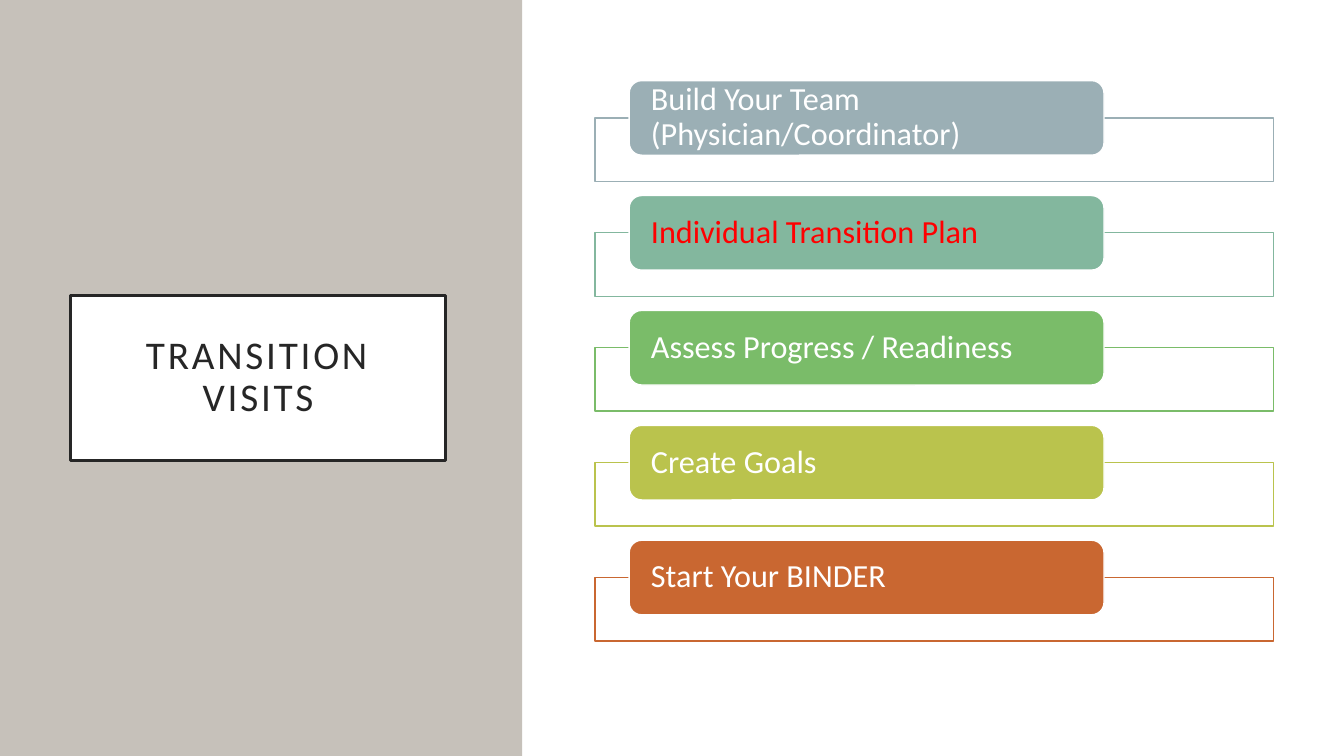
from dataclasses import dataclass

import pptx
import pptx.dml.color
import pptx.enum.shapes
import pptx.enum.text
import pptx.shapes.autoshape
import pptx.slide
import pptx.util

Inches = pptx.util.Inches
RGBColor = pptx.dml.color.RGBColor
MSO_SHAPE = pptx.enum.shapes.MSO_SHAPE
PP_ALIGN = pptx.enum.text.PP_ALIGN

WHITE = RGBColor(0xFF, 0xFF, 0xFF)
INK = RGBColor(0x26, 0x26, 0x26)
RED = RGBColor(0xFF, 0x00, 0x00)
TAUPE = RGBColor(0xC6, 0xC1, 0xBA)
SLATE = RGBColor(0x9B, 0xAF, 0xB5)
SAGE = RGBColor(0x83, 0xB7, 0x9E)
GREEN = RGBColor(0x7A, 0xBC, 0x69)
LIME = RGBColor(0xBA, 0xC3, 0x4D)
RUST = RGBColor(0xC9, 0x67, 0x31)

FIRST_TOP = 0.8
STEP_PITCH = 1.14
FRAME_DROP = 0.37


@dataclass
class Step:
    label: str
    color: RGBColor
    text_color: RGBColor = WHITE


STEPS = [
    Step("Build Your Team (Physician/Coordinator)", SLATE),
    Step("Individual Transition Plan", SAGE, RED),
    Step("Assess Progress / Readiness", GREEN),
    Step("Create Goals", LIME),
    Step("Start Your BINDER", RUST),
]


def add_box(
    s: pptx.slide.Slide,
    kind: MSO_SHAPE,
    box: tuple[float, float, float, float],
    fill: RGBColor,
    line: RGBColor | None = None,
    line_width: float = 1,
) -> pptx.shapes.autoshape.Shape:
    sp = s.shapes.add_shape(kind, *map(Inches, box))
    sp.shadow.inherit = False
    sp.fill.solid()
    sp.fill.fore_color.rgb = fill
    if line is None:
        sp.line.fill.background()
    else:
        sp.line.color.rgb = line
        sp.line.width = pptx.util.Pt(line_width)
    return sp


def set_text(
    sp: pptx.shapes.autoshape.Shape,
    text: str,
    size: float,
    color: RGBColor,
    align: PP_ALIGN,
    side_inset: float,
    end_inset: float,
) -> None:
    tf = sp.text_frame
    tf.word_wrap = True
    tf.vertical_anchor = pptx.enum.text.MSO_ANCHOR.MIDDLE
    tf.margin_left = tf.margin_right = Inches(side_inset)
    tf.margin_top = tf.margin_bottom = Inches(end_inset)
    p = tf.paragraphs[0]
    p.text = text
    p.alignment = align
    p.line_spacing = 0.9
    p.font.name = "Calibri"
    p.font.size = pptx.util.Pt(size)
    p.font.color.rgb = color


def add_title(s: pptx.slide.Slide) -> None:
    sp = add_box(s, MSO_SHAPE.RECTANGLE, (0.7, 2.93, 3.72, 1.64), WHITE, INK, 2.5)
    set_text(sp, "TRANSITION VISITS", 28, INK, PP_ALIGN.CENTER, 0.2, 0.2)
    r = sp.text_frame.paragraphs[0].runs[0]
    r.font._element.set("spc", "200")


def add_step(s: pptx.slide.Slide, step: Step, top: float) -> None:
    frame = (5.9, top + FRAME_DROP, 6.73, 0.63)
    add_box(s, MSO_SHAPE.RECTANGLE, frame, WHITE, step.color)
    tab = (6.24, top, 4.71, 0.74)
    sp = add_box(s, MSO_SHAPE.ROUNDED_RECTANGLE, tab, step.color, WHITE)
    set_text(sp, step.label, 23, step.text_color, PP_ALIGN.LEFT, 0.18, 0)


def main() -> None:
    prs = pptx.Presentation()
    prs.slide_width = Inches(13.33)
    prs.slide_height = Inches(7.5)
    s = prs.slides.add_slide(prs.slide_layouts[6])
    add_box(s, MSO_SHAPE.RECTANGLE, (0, 0, 5.18, 7.5), TAUPE)
    add_title(s)
    add_box(s, MSO_SHAPE.RECTANGLE, (5.2, 0, 8.13, 7.5), WHITE)
    for i, step in enumerate(STEPS):
        add_step(s, step, FIRST_TOP + i * STEP_PITCH)
    prs.save("out.pptx")


if __name__ == "__main__":
    main()
